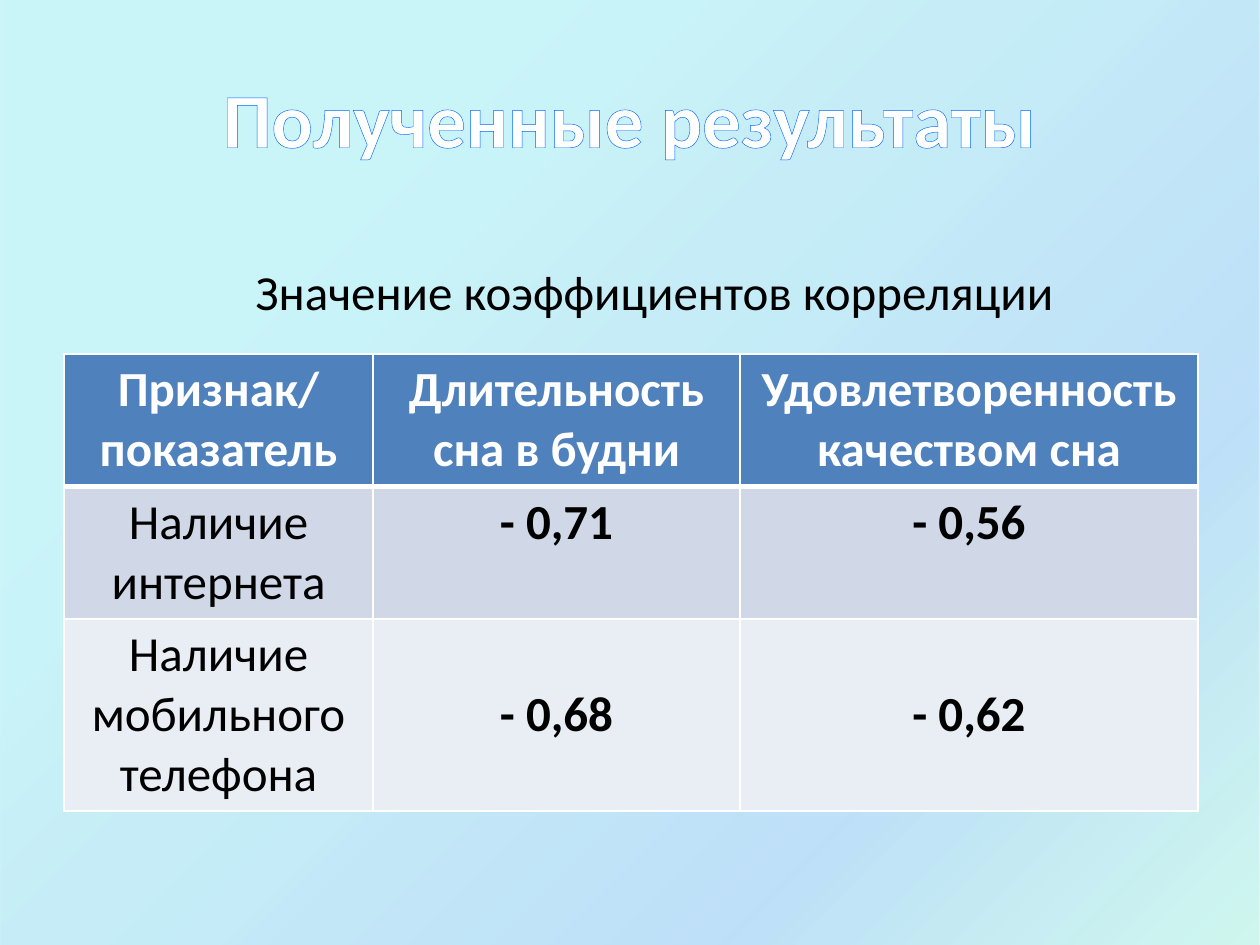
from dataclasses import dataclass

import pptx
import pptx.dml.color
import pptx.enum.shapes
import pptx.enum.text
import pptx.oxml
import pptx.oxml.ns
import pptx.util

PX = 914400 / 126
CENTER = pptx.enum.text.PP_ALIGN.CENTER
LEFT = pptx.enum.text.PP_ALIGN.LEFT
MIDDLE = pptx.enum.text.MSO_ANCHOR.MIDDLE
TOP = pptx.enum.text.MSO_ANCHOR.TOP


@dataclass(frozen=True)
class Theme:
    font: str = "Calibri"
    title_size: int = 44
    text_size: int = 28
    text: str = "000000"
    light: str = "FFFFFF"
    outline: str = "0066FF"
    outline_width: float = 1.45
    header: str = "4F81BD"
    bands: tuple = ("D0D8E8", "E9EDF4")
    # Position, colour and opacity, all positions and opacities in percent
    backdrop: tuple = ((25, "21D6E0", 23), (75, "0087E6", 25),
                       (100, "03D4A8", 18), (100, "005CBF", 26))


def px(length):
    return pptx.util.Emu(round(length * PX))


def rgb(color):
    return pptx.dml.color.RGBColor.from_string(color)


def line_xml(tag, color, points):
    return pptx.oxml.parse_xml(
        f'<a:{tag} {pptx.oxml.ns.nsdecls("a")} w="{round(points * 12700)}">'
        f'<a:solidFill><a:srgbClr val="{color}"/></a:solidFill></a:{tag}>')


class SlideBuilder:
    def __init__(self, page, theme):
        self.page = page
        self.theme = theme

    def add_text(self, frame, text, size, color, bold=False, align=LEFT):
        para = frame.paragraphs[0]
        para.alignment = align
        span = para.add_run()
        span.text = text
        span.font.name = self.theme.font
        span.font.size = pptx.util.Pt(size)
        span.font.bold = bold
        span.font.color.rgb = rgb(color)
        return span

    def backdrop(self, width, height):
        shape = self.page.shapes.add_shape(
            pptx.enum.shapes.MSO_SHAPE.RECTANGLE, 0, 0, px(width), px(height))
        shape.shadow.inherit = False
        shape.line.fill.background()
        stops = "".join(
            f'<a:gs pos="{pos * 1000}"><a:srgbClr val="{color}">'
            f'<a:alpha val="{alpha * 1000}"/></a:srgbClr></a:gs>'
            for pos, color, alpha in self.theme.backdrop)
        gradient = pptx.oxml.parse_xml(
            f'<a:gradFill {pptx.oxml.ns.nsdecls("a")} rotWithShape="1">'
            f'<a:gsLst>{stops}</a:gsLst><a:lin ang="2700000" scaled="0"/></a:gradFill>')
        shape.element.spPr.find(pptx.oxml.ns.qn("a:prstGeom")).addnext(gradient)
        # Keep the backdrop behind the title placeholder
        self.page.shapes.title.element.addprevious(shape.element)

    def title(self, text, left, top, width, height):
        box = self.page.shapes.title
        box.left, box.top, box.width, box.height = map(px, (left, top, width, height))
        box.text_frame.vertical_anchor = MIDDLE
        theme = self.theme
        span = self.add_text(box.text_frame, text, theme.title_size, theme.light, True, CENTER)
        properties = span._r.get_or_add_rPr()
        properties.insert(0, line_xml("ln", theme.outline, theme.outline_width))

    def caption(self, text, left, top, width, height):
        box = self.page.shapes.add_textbox(*map(px, (left, top, width, height)))
        box.text_frame.word_wrap = True
        self.add_text(box.text_frame, text, self.theme.text_size, self.theme.text)

    def table(self, rows, left, top, widths, heights):
        table = self.page.shapes.add_table(
            len(rows), len(widths), px(left), px(top),
            px(sum(widths)), px(sum(heights))).table
        for column, width in zip(table.columns, widths):
            column.width = px(width)
        for row, height in zip(table.rows, heights):
            row.height = px(height)
        for r, values in enumerate(rows):
            for c, text in enumerate(values):
                self.cell(table.cell(r, c), text, r, c)

    def cell(self, cell, text, row, column):
        theme = self.theme
        is_header = row == 0
        # The rule under the header is thicker than the others
        borders = {"lnL": 1, "lnR": 1, "lnT": 3 if row == 1 else 1,
                   "lnB": 3 if is_header else 1}
        properties = cell._tc.get_or_add_tcPr()
        for tag, points in borders.items():
            properties.append(line_xml(tag, theme.light, points))
        cell.fill.solid()
        cell.fill.fore_color.rgb = rgb(theme.header if is_header else theme.bands[row - 1])
        cell.vertical_anchor = MIDDLE if row == 2 else TOP
        self.add_text(cell.text_frame, text, theme.text_size,
                      theme.light if is_header else theme.text,
                      is_header or column > 0, CENTER)


def main():
    deck = pptx.Presentation()
    deck.slide_width, deck.slide_height = px(1260), px(945)
    page = deck.slides.add_slide(deck.slide_layouts[5])
    slide = SlideBuilder(page, Theme())

    # Background and heading
    slide.backdrop(1260, 966)
    slide.title("Полученные результаты", 63, 38, 1134, 158)

    # Correlation table with its caption
    slide.table(
        [["Признак/ показатель", "Длительность сна в будни",
          "Удовлетворенность качеством сна"],
         ["Наличие интернета", "- 0,71", "- 0,56"],
         ["Наличие мобильного телефона", "- 0,68", "- 0,62"]],
        64, 354, widths=(309, 367, 458), heights=(132, 132, 192))
    slide.caption("Значение коэффициентов корреляции", 243, 255, 839, 72)

    deck.save("out.pptx")


if __name__ == "__main__":
    main()
